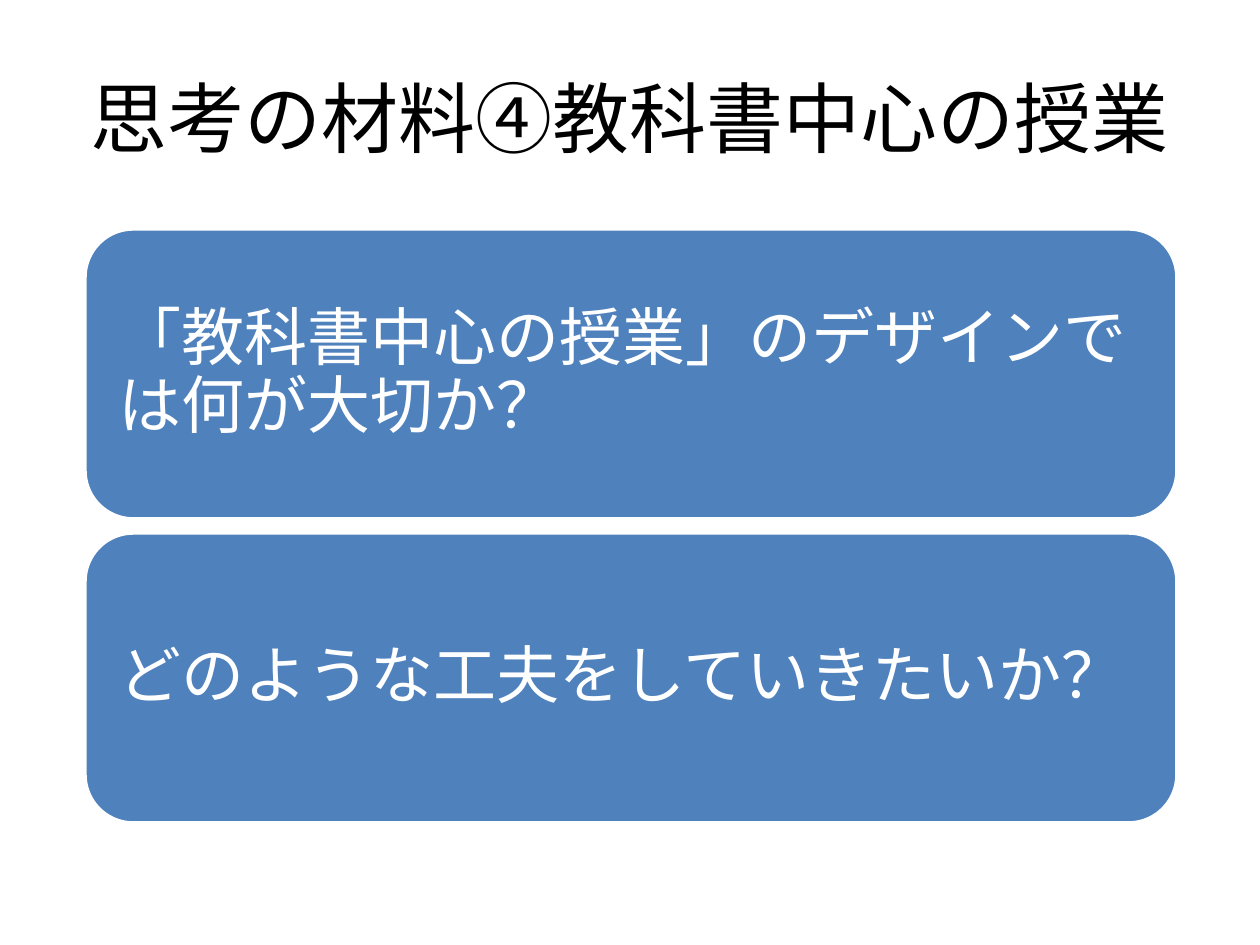
import dataclasses

import pptx
import pptx.dml.color
import pptx.enum.shapes
import pptx.enum.text
import pptx.util

PX = pptx.util.Inches(1) / 126
ALIGN = pptx.enum.text.PP_ALIGN


@dataclasses.dataclass(frozen=True)
class Theme:
    font: str = "Cabin"
    ink: str = "000000"
    paper: str = "FFFFFF"
    panel: str = "4F81BD"
    title_size: int = 44
    question_size: int = 36
    outline: int = 2


THEME = Theme()


def px(length):
    return pptx.util.Emu(round(length * PX))


def rgb(value):
    return pptx.dml.color.RGBColor.from_string(value)


def write(frame, text, *, size, color, align=ALIGN.LEFT, inset=(13, 6),
          line_spacing=1.0, space_after=0):
    frame.word_wrap = True
    frame.vertical_anchor = pptx.enum.text.MSO_ANCHOR.MIDDLE
    frame.margin_left = frame.margin_right = px(inset[0])
    frame.margin_top = frame.margin_bottom = px(inset[1])
    paragraph = frame.paragraphs[0]
    paragraph.alignment = align
    paragraph.line_spacing = line_spacing
    paragraph.space_after = pptx.util.Pt(space_after)
    run = paragraph.add_run()
    run.text = text
    run.font.name = THEME.font
    run.font.size = pptx.util.Pt(size)
    run.font.color.rgb = rgb(color)


def add_title(slide, box, text):
    title = slide.shapes.add_textbox(*map(px, box))
    write(title.text_frame, text, size=THEME.title_size, color=THEME.ink,
          align=ALIGN.CENTER)


def add_question(slide, box, text):
    panel = slide.shapes.add_shape(
        pptx.enum.shapes.MSO_SHAPE.ROUNDED_RECTANGLE, *map(px, box))
    panel.shadow.inherit = False
    panel.fill.solid()
    panel.fill.fore_color.rgb = rgb(THEME.panel)
    panel.line.color.rgb = rgb(THEME.paper)
    panel.line.width = pptx.util.Pt(THEME.outline)
    write(panel.text_frame, text, size=THEME.question_size, color=THEME.paper,
          inset=(19, 19), line_spacing=0.9,
          space_after=0.35 * THEME.question_size)


def add_questions(slide, box, questions, gap):
    left, top, width, height = box
    panel_height = (height - gap * (len(questions) - 1)) // len(questions)
    for row, question in enumerate(questions):
        panel_top = top + row * (panel_height + gap)
        add_question(slide, (left, panel_top, width, panel_height), question)


def main():
    deck = pptx.Presentation()
    deck.slide_width, deck.slide_height = px(1260), px(945)
    slide = deck.slides.add_slide(deck.slide_layouts[6])
    slide.background.fill.solid()
    slide.background.fill.fore_color.rgb = rgb(THEME.paper)
    add_title(slide, (63, 38, 1134, 157), "思考の材料④教科書中心の授業")
    add_questions(slide, (85, 229, 1092, 594), [
        "「教科書中心の授業」のデザインでは何が大切か？",
        "どのような工夫をしていきたいか？",
    ], gap=14)
    deck.save("out.pptx")


if __name__ == "__main__":
    main()
